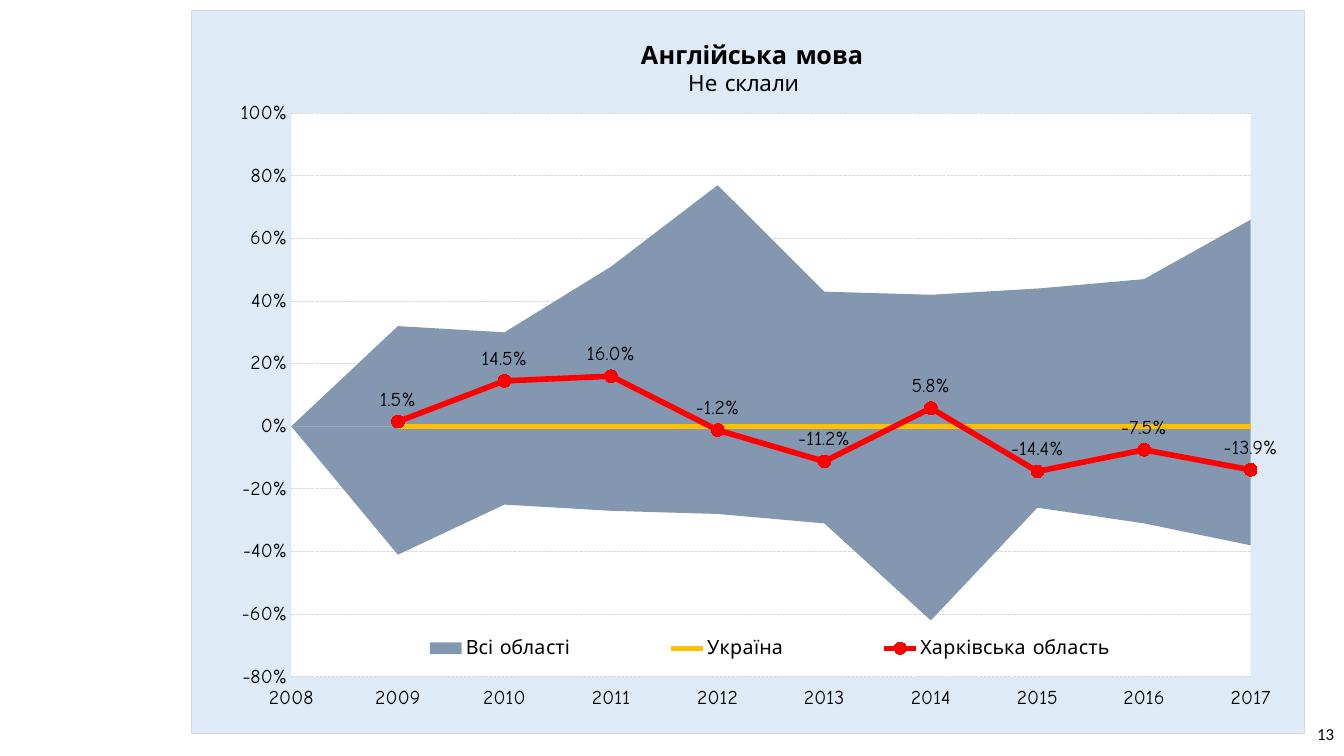
import pptx
import pptx.chart.data
import pptx.dml.color
import pptx.enum.chart
import pptx.enum.dml
import pptx.enum.text
import pptx.oxml
import pptx.oxml.ns
import pptx.util

W, H = 13.33, 7.5
FONT = "Comic Neue"
COLORS = {"text": "000000", "frame": "DEEBF7", "plot": "FFFFFF", "rule": "D9D9D9",
          "range": "8497B0", "country": "FFC000", "region": "FF0000"}
YEARS = [str(year) for year in range(2008, 2018)]
SERIES = [
    ("Всі області", "range", [None, 0.32, 0.3, 0.51, 0.77, 0.43, 0.42, 0.44, 0.47, 0.66]),
    ("Series 2", "range", [None, -0.41, -0.25, -0.27, -0.28, -0.31, -0.62, -0.26, -0.31, -0.38]),
    ("Україна", "country", [None] + [0] * 9),
    ("Харківська область", "region",
     [None, 0.015, 0.145, 0.16, -0.012, -0.112, 0.058, -0.144, -0.075, -0.139]),
]
qn = pptx.oxml.ns.qn


def rgb(name):
    """Return a palette colour."""
    return pptx.dml.color.RGBColor.from_string(COLORS[name])


def xml(text):
    """Parse a chart XML fragment."""
    tag, rest = text.split(" ", 1) if " " in text.split(">")[0] else text.split(">", 1)
    gap = " " if " " in text.split(">")[0] else ">"
    ns = pptx.oxml.ns.nsdecls("c", "a")
    return pptx.oxml.parse_xml(f"{tag} {ns}{gap}{rest}")


def style_font(font, size, **extra):
    """Apply the text format to a font."""
    values = {"name": FONT, "size": pptx.util.Pt(size), "bold": False, **extra}
    for key, value in values.items():
        setattr(font, key, value)
    font.color.rgb = rgb("text")


def style_line(line, color, width, dash=None):
    """Apply colour, width and dash to a line."""
    line.color.rgb = rgb(color)
    line.width = pptx.util.Pt(width)
    if dash:
        line.dash_style = dash


def place(element, inner=False, **shares):
    """Give a chart part a manual layout in shares of the chart."""
    for old in element.findall(qn("c:layout")):
        element.remove(old)
    target = '<c:layoutTarget val="inner"/>' if inner else ""
    modes = "".join(f'<c:{key}Mode val="edge"/>' for key in "xy")
    sizes = "".join(f'<c:{key} val="{value}"/>' for key, value in shares.items())
    layout = xml(f"<c:layout><c:manualLayout>{target}{modes}{sizes}</c:manualLayout></c:layout>")
    overlay = element.find(qn("c:overlay"))
    if overlay is None:
        element.insert(0, layout)
    else:
        overlay.addprevious(layout)


def fill_xml(color, border=""):
    """Build the fill and border of a chart background."""
    return xml(f'<c:spPr><a:solidFill><a:srgbClr val="{COLORS[color]}"/></a:solidFill>'
               f"<a:ln{border}</a:ln></c:spPr>")


def split_lines(plot_area):
    """Move the last two area series into a line plot on the same axes."""
    area = plot_area.find(qn("c:areaChart"))
    lines = xml('<c:lineChart><c:grouping val="standard"/><c:varyColors val="0"/></c:lineChart>')
    for ser in area.findall(qn("c:ser"))[2:]:
        lines.append(ser)
    lines.append(xml('<c:marker val="1"/>'))
    for axis in area.findall(qn("c:axId")):
        lines.append(xml(f'<c:axId val="{axis.get("val")}"/>'))
    area.addnext(lines)


def style_series(chart):
    """Colour the areas and lines and label the region."""
    areas, lines = chart.plots
    areas.vary_by_categories = False
    for ser, (_, color, _) in zip(areas.series, SERIES):
        ser.format.fill.solid()
        ser.format.fill.fore_color.rgb = rgb(color)
        ser.format.line.fill.background()
    for ser, (_, color, _) in zip(lines.series, SERIES[2:]):
        ser.smooth = False
        style_line(ser.format.line, color, 4)
        ser.marker.style = pptx.enum.chart.XL_MARKER_STYLE.NONE
    region = lines.series[1]
    region.marker.style = pptx.enum.chart.XL_MARKER_STYLE.CIRCLE
    region.marker.size = 9
    region.marker.format.fill.solid()
    region.marker.format.fill.fore_color.rgb = rgb("region")
    style_line(region.marker.format.line, "region", 0.75)
    labels = region.data_labels
    for key, value in {"show_value": True, "number_format": "0.0%",
                       "number_format_is_linked": False,
                       "position": pptx.enum.chart.XL_LABEL_POSITION.ABOVE}.items():
        setattr(labels, key, value)
    style_font(labels.font, 14)


def style_axes(chart):
    """Format both axes, the grid and the subtitle."""
    cat, val = chart.category_axis, chart.value_axis
    for axis in (cat, val):
        axis.major_tick_mark = axis.minor_tick_mark = pptx.enum.chart.XL_TICK_MARK.NONE
        style_font(axis.tick_labels.font, 14)
    cat.has_major_gridlines = False
    cat.tick_label_position = pptx.enum.chart.XL_TICK_LABEL_POSITION.LOW
    style_line(cat.format.line, "rule", 1)
    for key, value in {"minimum_scale": -0.8, "maximum_scale": 1, "major_unit": 0.2,
                       "has_major_gridlines": True}.items():
        setattr(val, key, value)
    val.tick_labels.number_format = "0%"
    val.tick_labels.number_format_is_linked = False
    val.format.line.fill.background()
    style_line(val.major_gridlines.format.line, "rule", 0.75, pptx.enum.dml.MSO_LINE.SQUARE_DOT)
    add_title(cat.axis_title, "Не склали", 16, False, 0.443, 0.075)


def add_title(title, text, size, bold, x, y):
    """Write a chart or axis title and place it."""
    title.text_frame.text = text
    style_font(title.text_frame.paragraphs[0].runs[0].font, size, bold=bold)
    place(title._element.find(qn("c:title")) if title._element.tag != qn("c:title")
          else title._element, x=x, y=y)


def add_legend(chart):
    """Place the legend inside the plot without the lower range."""
    chart.has_legend = True
    legend = chart.legend
    legend.position = pptx.enum.chart.XL_LEGEND_POSITION.BOTTOM
    legend.include_in_layout = True
    style_font(legend.font, 14)
    legend._element.insert(1, xml('<c:legendEntry><c:idx val="1"/><c:delete val="1"/></c:legendEntry>'))
    place(legend._element, x=0.13, y=0.855, w=0.78, h=0.055)


def add_results_chart(slide, x, y, w, h):
    """Add the combined area and line chart in the given box."""
    data = pptx.chart.data.CategoryChartData(number_format="0.0%")
    data.categories = YEARS
    for name, _, values in SERIES:
        data.add_series(name, values)
    box = [pptx.util.Inches(v) for v in (x, y, w, h)]
    chart = slide.shapes.add_chart(pptx.enum.chart.XL_CHART_TYPE.AREA, *box, data).chart
    style_font(chart.font, 14)
    space = chart._chartSpace
    plot_area = space.find(".//" + qn("c:plotArea"))
    split_lines(plot_area)
    style_series(chart)
    style_axes(chart)
    chart.has_title = True
    add_title(chart.chart_title, "Англійська мова", 18, True, 0.4, 0.032)
    add_legend(chart)
    place(plot_area, inner=True, x=0.09, y=0.142, w=0.862, h=0.78)
    plot_area.append(fill_xml("plot", "><a:noFill/>"))
    border = f' w="9525"><a:solidFill><a:srgbClr val="{COLORS["rule"]}"/></a:solidFill>'
    space.find(qn("c:chart")).addnext(fill_xml("frame", border))
    space.find(".//" + qn("c:crossBetween")).set("val", "midCat")
    space.find(".//" + qn("c:dispBlanksAs")).set("val", "gap")


def add_page_number(slide, x, y, w, h):
    """Add the page number at the right of the given box."""
    sp = slide.shapes.add_textbox(*[pptx.util.Inches(v) for v in (x, y, w, h)])
    tf = sp.text_frame
    tf.word_wrap = True
    tf.vertical_anchor = pptx.enum.text.MSO_ANCHOR.MIDDLE
    p = tf.paragraphs[0]
    p.alignment = pptx.enum.text.PP_ALIGN.RIGHT
    r = p.add_run()
    r.text = "13"
    style_font(r.font, 12, name="Calibri")


def main():
    """Build and save the slide."""
    prs = pptx.Presentation()
    prs.slide_width, prs.slide_height = pptx.util.Inches(W), pptx.util.Inches(H)
    slide = prs.slides.add_slide(prs.slide_layouts[6])
    add_page_number(slide, W - 3, 7.08, 3, 0.4)
    add_results_chart(slide, 1.89, 0.1, 11.05, 7.18)
    prs.save("out.pptx")


if __name__ == "__main__":
    main()
